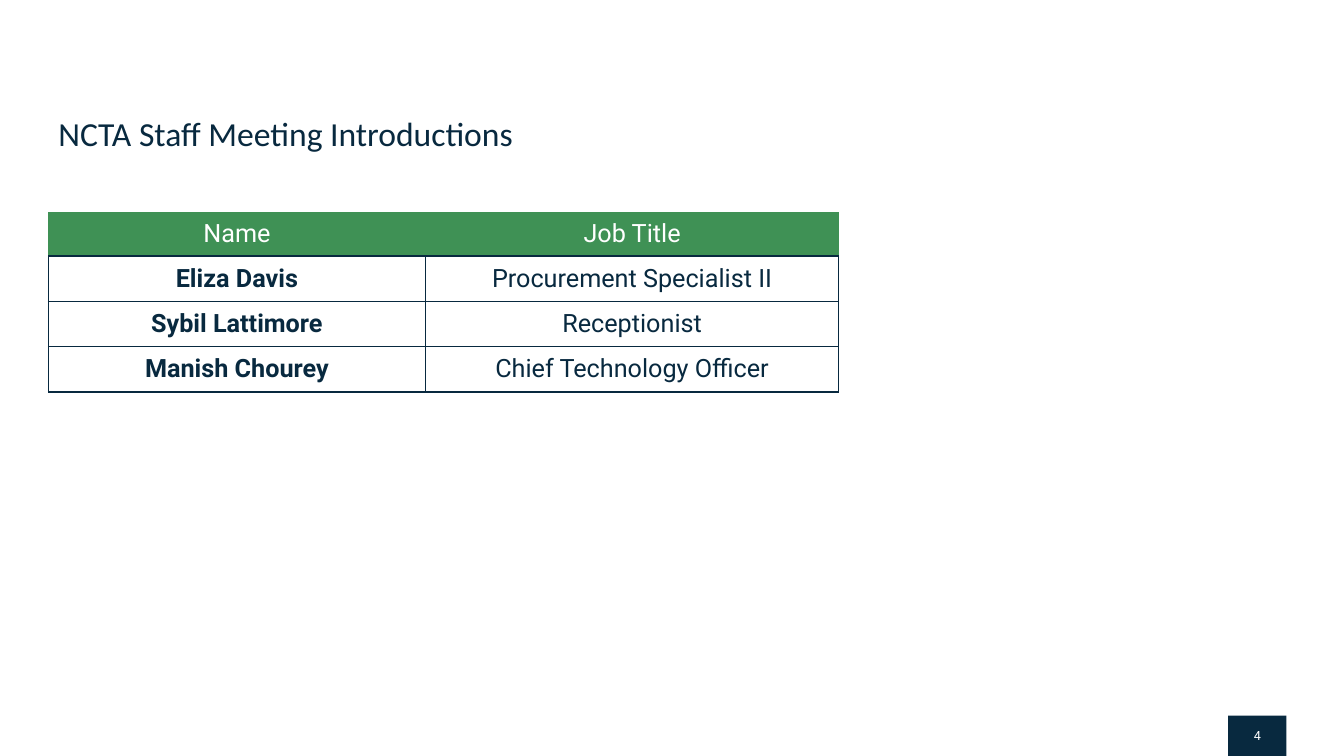
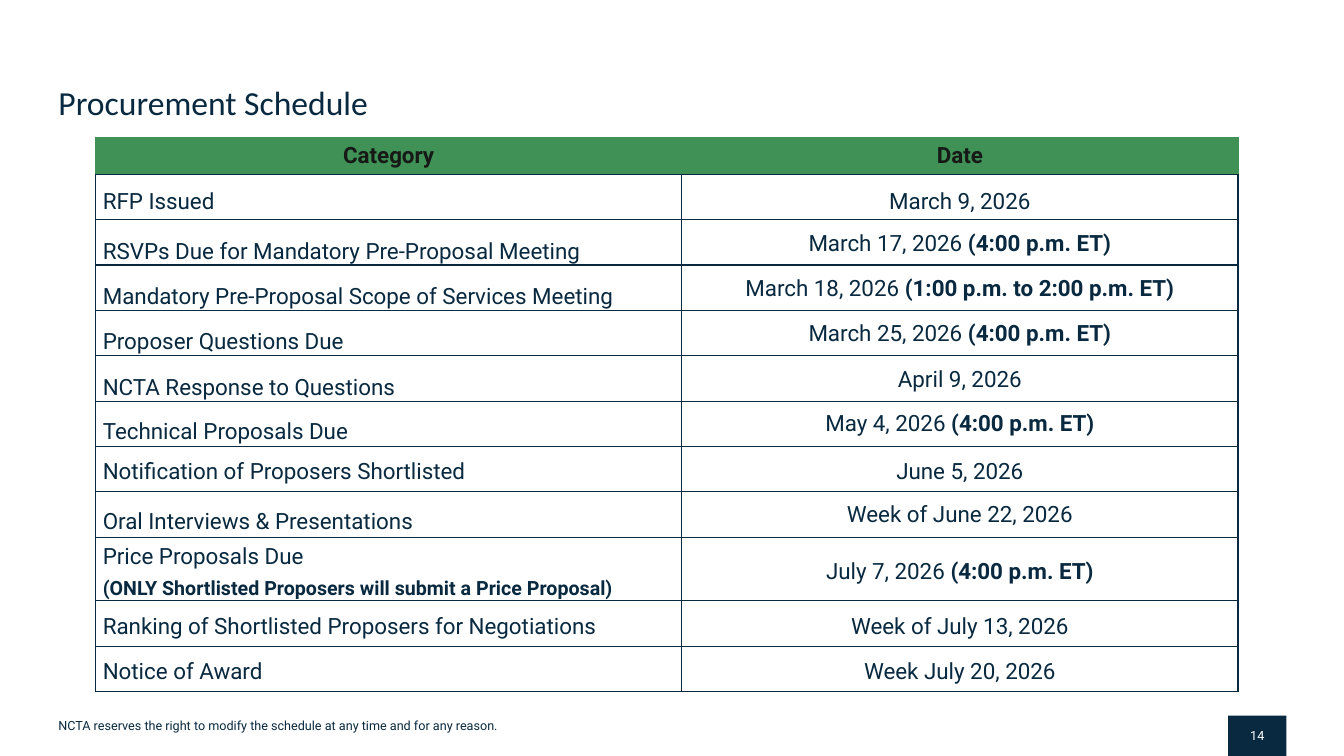
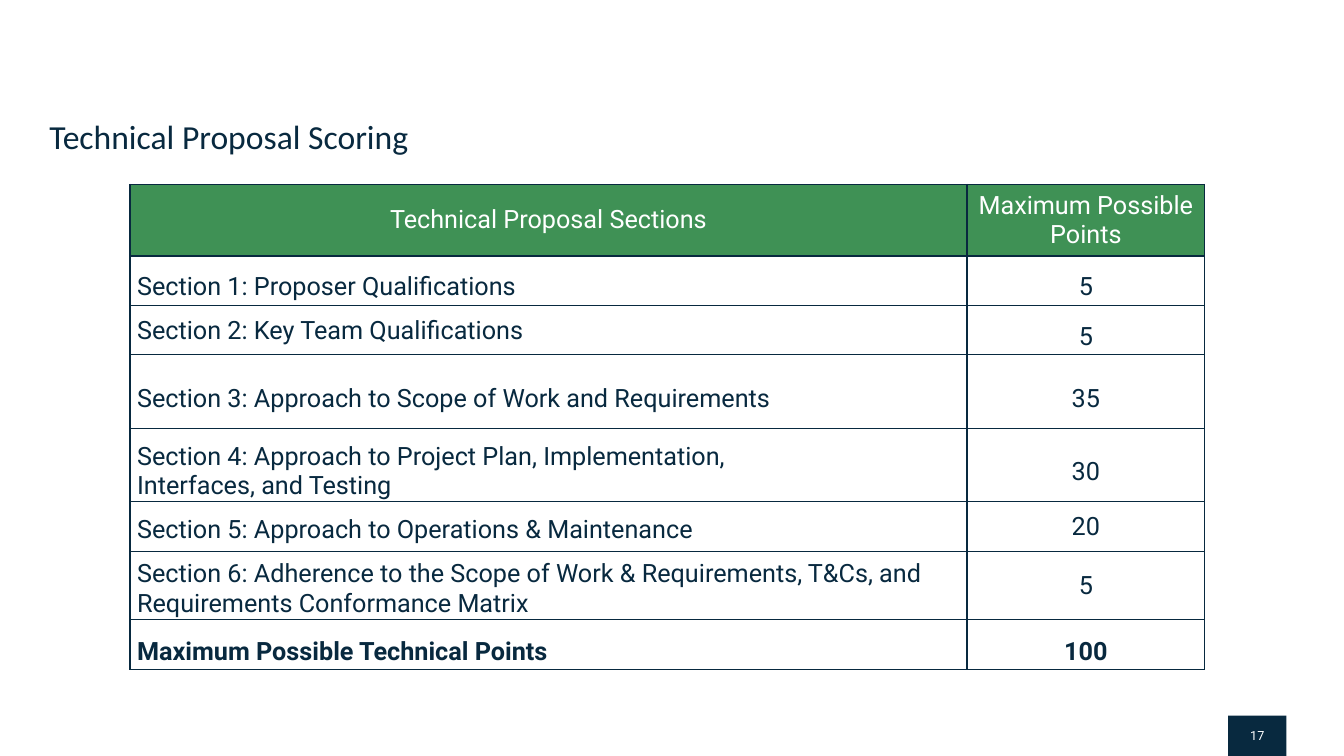
"""Build three procurement slides: introductions, schedule and scoring."""
from dataclasses import dataclass

from lxml import etree
from pptx import Presentation
from pptx.dml.color import RGBColor
from pptx.enum.shapes import MSO_SHAPE
from pptx.enum.text import MSO_ANCHOR, PP_ALIGN
from pptx.oxml.ns import qn
from pptx.util import Inches, Pt

LEFT, CENTER = PP_ALIGN.LEFT, PP_ALIGN.CENTER
TOP, MIDDLE = MSO_ANCHOR.TOP, MSO_ANCHOR.MIDDLE
RECTANGLE = MSO_SHAPE.RECTANGLE


@dataclass(frozen=True)
class Theme:
    navy: str = "08293F"
    green: str = "3F9155"
    white: str = "FFFFFF"
    black: str = "171917"
    heading_font: str = "Calibri"
    body_font: str = "Roboto"
    title_size: int = 24
    large_size: int = 18
    medium_size: int = 16
    detail_size: int = 14
    small_size: int = 9


THEME = Theme()


def write(frame, text, size, color=THEME.navy, font=THEME.body_font, align=LEFT, line_spacing=1.0):
    """Write one paragraph per line, with **bold** parts and smaller detail lines."""
    for line_index, line in enumerate(text.split("\n")):
        paragraph = frame.add_paragraph() if line_index else frame.paragraphs[0]
        paragraph.alignment = align
        paragraph.line_spacing = line_spacing
        if line_index:
            paragraph.space_before = Pt(5.1)
        for part_index, part in enumerate(line.split("**")):
            if part:
                run = paragraph.add_run()
                run.text = part
                run.font.name = font
                run.font.size = Pt(THEME.detail_size if line_index else size)
                run.font.bold = part_index % 2 == 1
                run.font.color.rgb = RGBColor.from_string(color)


def draw_border(cell, side, color, width):
    """Draw one border of a table cell."""
    properties = cell._tc.get_or_add_tcPr()
    line = etree.SubElement(properties, qn(f"a:ln{side}"), w=str(Pt(width)))
    fill = etree.SubElement(line, qn("a:solidFill"))
    etree.SubElement(fill, qn("a:srgbClr"), val=color)


# Each body row holds its height, then text and top inset for both columns.
INTRODUCTIONS = [
    (0.45, "**Eliza Davis**", 0, "Procurement Specialist II", 0),
    (0.45, "**Sybil Lattimore**", 0, "Receptionist", 0),
    (0.45, "**Manish Chourey**", 0, "Chief Technology Officer", 0),
]
SCHEDULE = [
    (0.45, "RFP Issued", 0.1, "March 9, 2026", 0.1),
    (0.45, "RSVPs Due for Mandatory Pre-Proposal Meeting", 0.18,
     "March 17, 2026 **(4:00 p.m. ET)**", 0.02),
    (0.45, "Mandatory Pre-Proposal Scope of Services Meeting", 0.18,
     "March 18, 2026 **(1:00 p.m. to 2:00 p.m. ET)**", 0.02),
    (0.45, "Proposer Questions Due", 0.18, "March 25, 2026 **(4:00 p.m. ET)**", 0.02),
    (0.45, "NCTA Response to Questions", 0.18, "April 9, 2026", 0.02),
    (0.45, "Technical Proposals Due", 0.15, "May 4, 2026 **(4:00 p.m. ET)**", 0),
    (0.45, "Notification of Proposers Shortlisted", 0.06, "June 5, 2026", 0.06),
    (0.45, "Oral Interviews & Presentations", 0.15, "Week of June 22, 2026", 0),
    (0.62, "Price Proposals Due\n**(ONLY Shortlisted Proposers will submit a Price Proposal)**", 0.06,
     "July 7, 2026 **(4:00 p.m. ET)**", 0.06),
    (0.45, "Ranking of Shortlisted Proposers for Negotiations", 0.06, "Week of July 13, 2026", 0.06),
    (0.45, "Notice of Award", 0.06, "Week July 20, 2026", 0.06),
]
SCORING = [
    (0.49, "Section 1: Proposer Qualifications", 0.13, "5", 0.13),
    (0.49, "Section 2: Key Team Qualifications", 0.01, "5", 0.14),
    (0.73, "Section 3: Approach to Scope of Work and Requirements", 0.14, "35", 0.14),
    (0.73, "Section 4: Approach to Project Plan, Implementation, Interfaces, and Testing", 0.13, "30", 0.13),
    (0.49, "Section 5: Approach to Operations & Maintenance", 0.07, "20", 0),
    (0.68, "Section 6: Adherence to the Scope of Work & Requirements, T&Cs, and "
     "Requirements Conformance Matrix", 0.07, "5", 0),
    (0.49, "**Maximum Possible Technical Points**", 0.14, "**100**", 0.14),
]

PAGES = [
    dict(number="4", title="NCTA Staff Meeting Introductions", title_top=1.19, title_height=0.31,
         title_inset=0.1, title_spacing=0.9, left=0.48, top=2.11, columns=(3.74, 4.1),
         header=(0.43, "Name", 0.05, "Job Title", 0.05), header_color=THEME.white,
         header_edge=(THEME.green, 0.5), rows=INTRODUCTIONS, size=THEME.large_size, first_align=CENTER),
    dict(number="14", title="Procurement Schedule", title_top=0.88, title_height=0.31,
         title_inset=0.1, title_spacing=0.9, left=0.95, top=1.36, columns=(5.81, 5.52),
         header=(0.37, "**Category**", 0.05, "**Date**", 0.05), header_color=THEME.black,
         header_edge=(THEME.green, 0.5), rows=SCHEDULE, size=THEME.medium_size, first_align=LEFT,
         footnote="NCTA reserves the right to modify the schedule at any time and for any reason."),
    dict(number="17", title="Technical Proposal Scoring", title_top=1.14, title_height=0.42,
         title_inset=0.01, title_spacing=1.0, left=1.29, top=1.83, columns=(8.3, 2.36),
         header=(0.71, "Technical Proposal Sections", 0.05, "Maximum Possible Points", 0.05),
         header_color=THEME.white, header_edge=(THEME.navy, 1), rows=SCORING,
         size=THEME.large_size, first_align=LEFT),
]

deck = Presentation()
deck.slide_width, deck.slide_height = Inches(13.33), Inches(7.5)
title_only = deck.slide_layouts[5]

for page in PAGES:
    slide = deck.slides.add_slide(title_only)

    badge = slide.shapes.add_shape(RECTANGLE, Inches(12.18), Inches(7.1), Inches(0.58), Inches(0.4))
    badge.shadow.inherit = False
    badge.fill.solid()
    badge.fill.fore_color.rgb = RGBColor.from_string(THEME.navy)
    badge.line.fill.background()
    badge.text_frame.vertical_anchor = MIDDLE
    write(badge.text_frame, page["number"], THEME.small_size, color=THEME.white, align=CENTER)

    title = slide.shapes.title
    title.left, title.top = Inches(0.48), Inches(page["title_top"])
    title.width, title.height = Inches(12.29), Inches(page["title_height"])
    heading = title.text_frame
    heading.vertical_anchor = MIDDLE
    heading.margin_left = Inches(page["title_inset"])
    heading.margin_top = heading.margin_bottom = 0
    write(heading, page["title"], THEME.title_size, font=THEME.heading_font,
          line_spacing=page["title_spacing"])

    if "footnote" in page:
        footnote = slide.shapes.add_textbox(Inches(0.48), Inches(7.09), Inches(7.59), Inches(0.4)).text_frame
        footnote.word_wrap = True
        footnote.vertical_anchor = TOP
        write(footnote, page["footnote"], THEME.small_size, line_spacing=0.9)

    rows = [page["header"], *page["rows"]]
    grid = slide.shapes.add_table(
        len(rows), 2, Inches(page["left"]), Inches(page["top"]),
        Inches(sum(page["columns"])), Inches(sum(row[0] for row in rows))).table
    grid.horz_banding = False
    for column, width in zip(grid.columns, page["columns"]):
        column.width = Inches(width)

    for row_index, (height, first, first_inset, second, second_inset) in enumerate(rows):
        grid.rows[row_index].height = Inches(height)
        is_header = row_index == 0
        entries = [(first, first_inset, page["first_align"]), (second, second_inset, CENTER)]
        for column_index, (text, inset, align) in enumerate(entries):
            cell = grid.cell(row_index, column_index)
            align = CENTER if is_header else align
            cell.vertical_anchor = MIDDLE
            cell.margin_top = Inches(inset)
            cell.margin_bottom = Inches(0.05 if is_header else 0)
            cell.margin_left = Inches(0.11 if is_header else 0.07 if align == LEFT else 0)
            cell.margin_right = Inches(0.11 if is_header else 0)
            for side in "LRTB":
                edge = page["header_edge"] if is_header and side != "B" else (THEME.navy, 1)
                draw_border(cell, side, *edge)
            if is_header:
                cell.fill.solid()
                cell.fill.fore_color.rgb = RGBColor.from_string(THEME.green)
            else:
                cell.fill.background()
            write(cell.text_frame, text, page["size"], align=align,
                  color=page["header_color"] if is_header else THEME.navy)
            if text.startswith("Section 4"):
                cell.margin_right = Inches(1.6)

deck.save("out.pptx")
